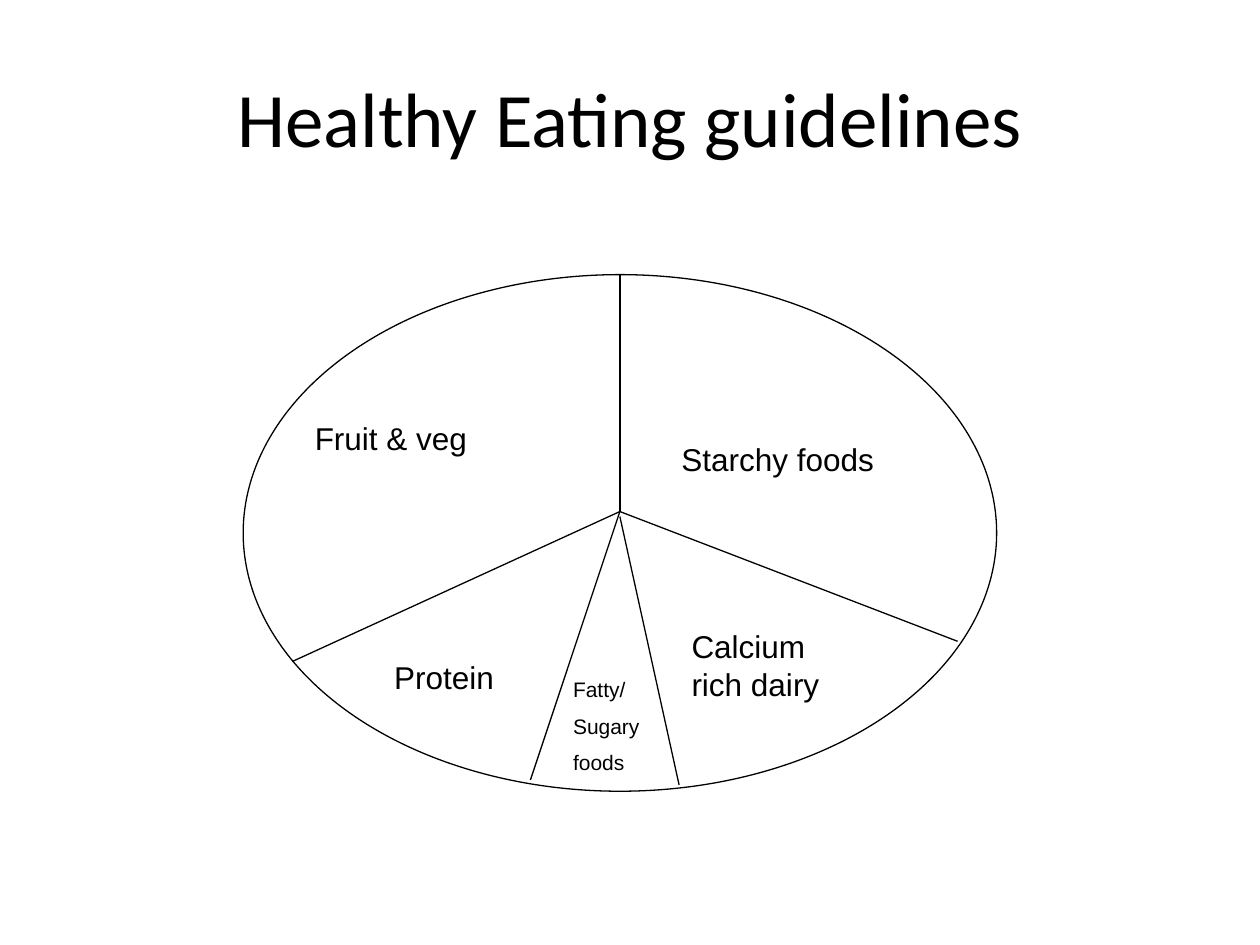
"""Build the healthy eating guidelines slide."""
import dataclasses

import pptx
import pptx.dml.color
import pptx.enum.shapes
import pptx.enum.text
import pptx.oxml.xmlchemy
import pptx.slide
import pptx.text.text
import pptx.util

Inches = pptx.util.Inches
Pt = pptx.util.Pt


@dataclasses.dataclass(frozen=True)
class Theme:
    """Colours, fonts and sizes of the slide."""
    ink: pptx.dml.color.RGBColor = pptx.dml.color.RGBColor(0, 0, 0)
    head: str = "Calibri"
    body: str = "Arial"
    title: int = 44
    label: int = 18
    small: int = 12
    line: float = 0.75
    gap: float = 0.54


@dataclasses.dataclass(frozen=True)
class Spoke:
    """A dividing line from the hub to the rim."""
    x: float
    y: float
    top: float = 4.06


@dataclasses.dataclass(frozen=True)
class Label:
    """The name of one food group."""
    text: str
    left: float
    top: float
    width: float
    height: float = 0.4
    size: int = Theme.label


THEME = Theme()
HUB = 4.92
SPOKES = (
    Spoke(2.32, 5.25),
    Spoke(4.21, 6.19),
    Spoke(5.39, 6.23, 4.1),
    Spoke(7.6, 5.09),
    Spoke(HUB, 2.18),
)
LABELS = (
    Label("Fruit & veg", 2.4, 3.28, 2.28),
    Label("Protein", 3.03, 5.17, 1.18),
    Label("Fatty/\nSugary\nfoods", 4.45, 5.32, 0.94, 0.9, THEME.small),
    Label("Calcium rich dairy", 5.39, 4.93, 1.57, 0.7),
    Label("Starchy foods", 5.31, 3.44, 1.97),
)


def style(frame: pptx.text.text.TextFrame, font: str, size: int) -> None:
    """Set the font of every run in a text frame."""
    for para in frame.paragraphs:
        for run in para.runs:
            run.font.name = font
            run.font.size = Pt(size)
            run.font.color.rgb = THEME.ink


def add_title(slide: pptx.slide.Slide, text: str) -> None:
    """Place and format the slide title."""
    title = slide.shapes.title
    title.left, title.top = Inches(0.5), Inches(0.3)
    title.width, title.height = Inches(9), Inches(1.25)
    frame = title.text_frame
    frame.text = text
    frame.vertical_anchor = pptx.enum.text.MSO_ANCHOR.MIDDLE
    frame.paragraphs[0].alignment = pptx.enum.text.PP_ALIGN.CENTER
    style(frame, THEME.head, THEME.title)


def add_plate(slide: pptx.slide.Slide) -> None:
    """Draw the outline of the plate."""
    plate = slide.shapes.add_shape(
        pptx.enum.shapes.MSO_SHAPE.OVAL,
        Inches(1.93), Inches(2.18), Inches(5.98), Inches(4.1))
    plate.shadow.inherit = False
    plate.fill.background()
    plate.line.color.rgb = THEME.ink
    plate.line.width = Pt(THEME.line)


def add_spoke(slide: pptx.slide.Slide, spoke: Spoke) -> None:
    """Draw one dividing line."""
    line = slide.shapes.add_connector(
        pptx.enum.shapes.MSO_CONNECTOR.STRAIGHT,
        Inches(HUB), Inches(spoke.top), Inches(spoke.x), Inches(spoke.y))
    line.line.color.rgb = THEME.ink
    line.line.width = Pt(THEME.line)
    props = line._element.spPr
    props.append(pptx.oxml.xmlchemy.OxmlElement("a:effectLst"))


def add_label(slide: pptx.slide.Slide, label: Label) -> None:
    """Write the name of one food group."""
    box = slide.shapes.add_textbox(
        Inches(label.left), Inches(label.top),
        Inches(label.width), Inches(label.height))
    frame = box.text_frame
    frame.word_wrap = True
    frame.auto_size = pptx.enum.text.MSO_AUTO_SIZE.SHAPE_TO_FIT_TEXT
    frame.text = label.text
    for para in frame.paragraphs:
        para.space_before = Pt(label.size * THEME.gap)
    style(frame, THEME.body, label.size)


def main() -> None:
    """Build and save the deck."""
    deck = pptx.Presentation()
    deck.slide_width, deck.slide_height = Inches(10), Inches(7.5)
    slide = deck.slides.add_slide(deck.slide_layouts[5])
    add_title(slide, "Healthy Eating guidelines")
    add_plate(slide)
    for spoke in SPOKES:
        add_spoke(slide, spoke)
    for label in LABELS:
        add_label(slide, label)
    deck.save("out.pptx")


if __name__ == "__main__":
    main()
